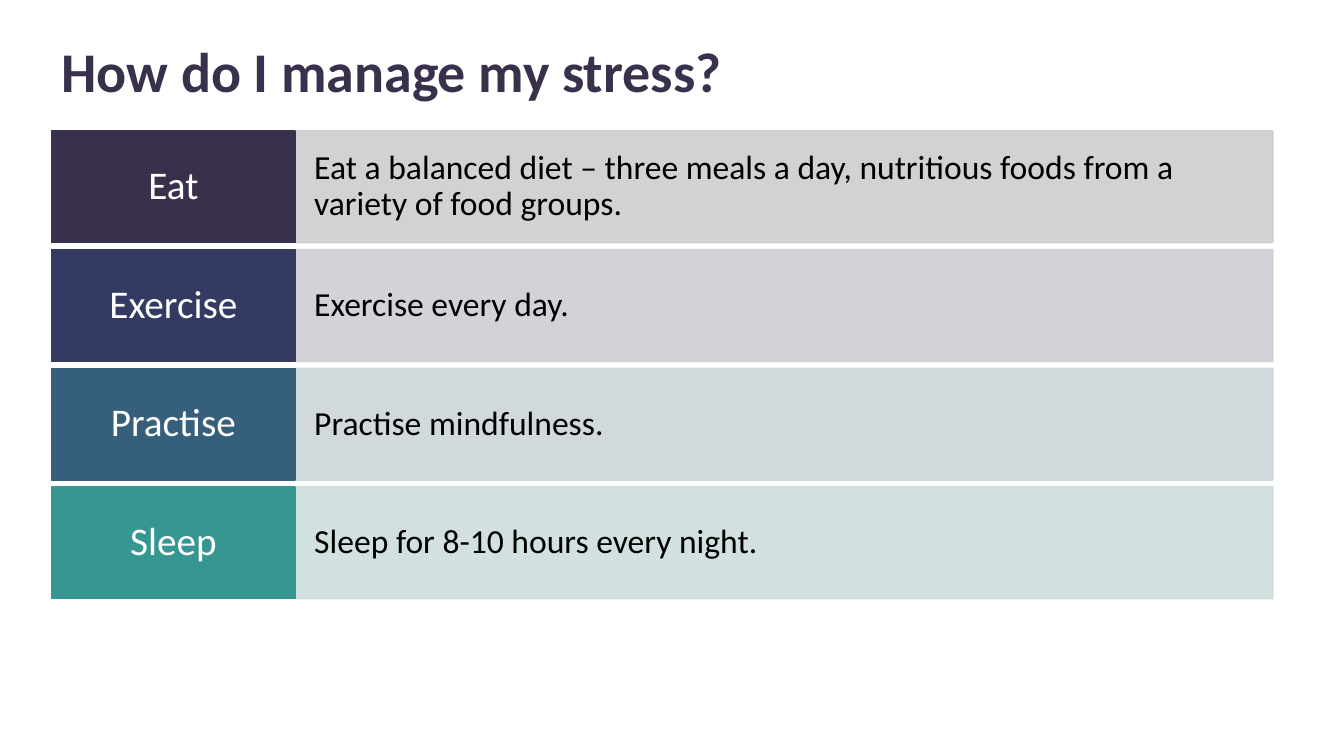
import pptx
import pptx.util
import pptx.dml.color
import pptx.enum.shapes
import pptx.enum.text
import pptx.oxml
import pptx.oxml.ns
from dataclasses import dataclass

Cm = pptx.util.Cm
Pt = pptx.util.Pt
RGB = pptx.dml.color.RGBColor.from_string
ALIGN = pptx.enum.text.PP_ALIGN
MIDDLE = pptx.enum.text.MSO_ANCHOR.MIDDLE


@dataclass
class Theme:
    font: str = "Calibri"
    title: str = "39304C"
    dark: str = "000000"
    light: str = "FFFFFF"
    head: int = 40
    label: int = 28
    body: int = 24
    labels: tuple = ("39304C", "343A62", "365F7B", "369691")
    bodies: tuple = ("CECDD0", "CDCFD4", "CED5D9", "CEDDDC")


theme = Theme()


def write(shape, text, size, color, align, side, edge):
    frame = shape.text_frame
    frame.word_wrap = True
    frame.auto_size = pptx.enum.text.MSO_AUTO_SIZE.NONE
    frame.vertical_anchor = MIDDLE
    frame.margin_left = frame.margin_right = Cm(side)
    frame.margin_top = frame.margin_bottom = Cm(edge)
    para = frame.paragraphs[0]
    para.text = text
    para.alignment = align
    para.line_spacing = 0.9
    para.font.name = theme.font
    para.font.size = Pt(size)
    para.font.color.rgb = RGB(color)
    return para


def block(left, top, width, height, color, alpha):
    shape = slide.shapes.add_shape(
        pptx.enum.shapes.MSO_SHAPE.RECTANGLE, Cm(left), Cm(top), Cm(width), Cm(height))
    shape.shadow.inherit = False
    shape.line.width = Pt(1)
    for fill in (shape.fill, shape.line.fill):
        fill.solid()
        fill.fore_color.rgb = RGB(color)
    if alpha < 100:
        for tone in shape.element.spPr.iter(pptx.oxml.ns.qn("a:srgbClr")):
            tone.append(pptx.oxml.parse_xml(
                f'<a:alpha {pptx.oxml.ns.nsdecls("a")} val="{alpha * 1000}"/>'))
    return shape


deck = pptx.Presentation()
deck.slide_width = Cm(33.87)
deck.slide_height = Cm(19.05)
slide = deck.slides.add_slide(deck.slide_layouts[5])

left, top = 1.3, 3.3
narrow, wide = 6.14, 24.64
height, step = 2.82, 2.99

title = slide.shapes.title
title.left, title.top = Cm(left), Cm(1.02)
title.width, title.height = Cm(29.21), Cm(1.73)
para = write(title, "How do I manage my stress?", theme.head, theme.title, ALIGN.LEFT, 0.25, 0.13)
para.font.bold = True

habits = [
    ("Eat", "Eat a balanced diet – three meals a day, nutritious foods from a variety of food groups."),
    ("Exercise", "Exercise every day."),
    ("Practise", "Practise mindfulness."),
    ("Sleep", "Sleep for 8-10 hours every night."),
]

for row, (label, advice) in enumerate(habits):
    y = top + row * step
    body = block(left + narrow, y, wide, height, theme.bodies[row], 90)
    write(body, advice, theme.body, theme.dark, ALIGN.LEFT, 0.48, 0.71)
    tile = block(left, y, narrow, height, theme.labels[row], 100)
    write(tile, label, theme.label, theme.light, ALIGN.CENTER, 0.33, 0.28)

deck.save("out.pptx")
